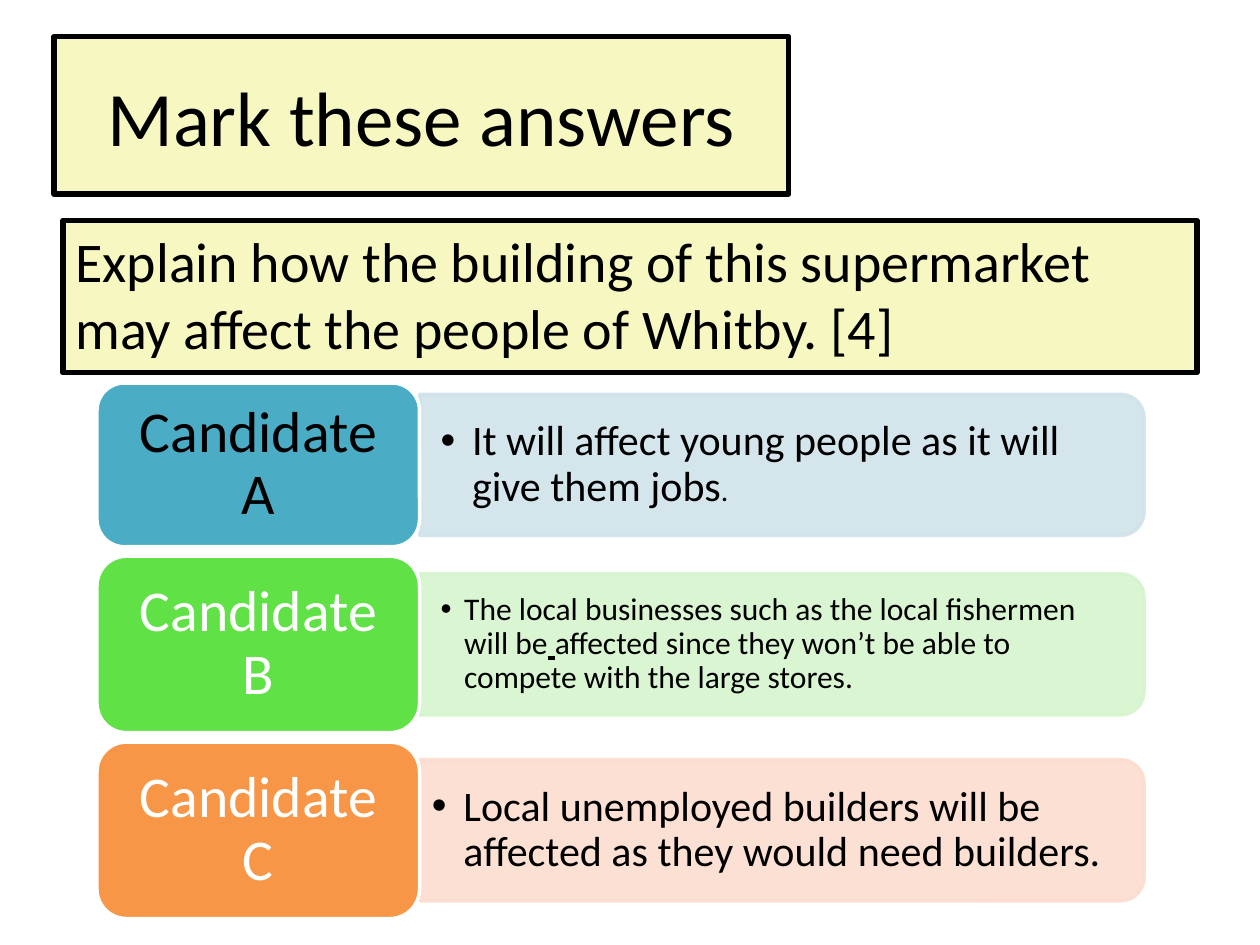
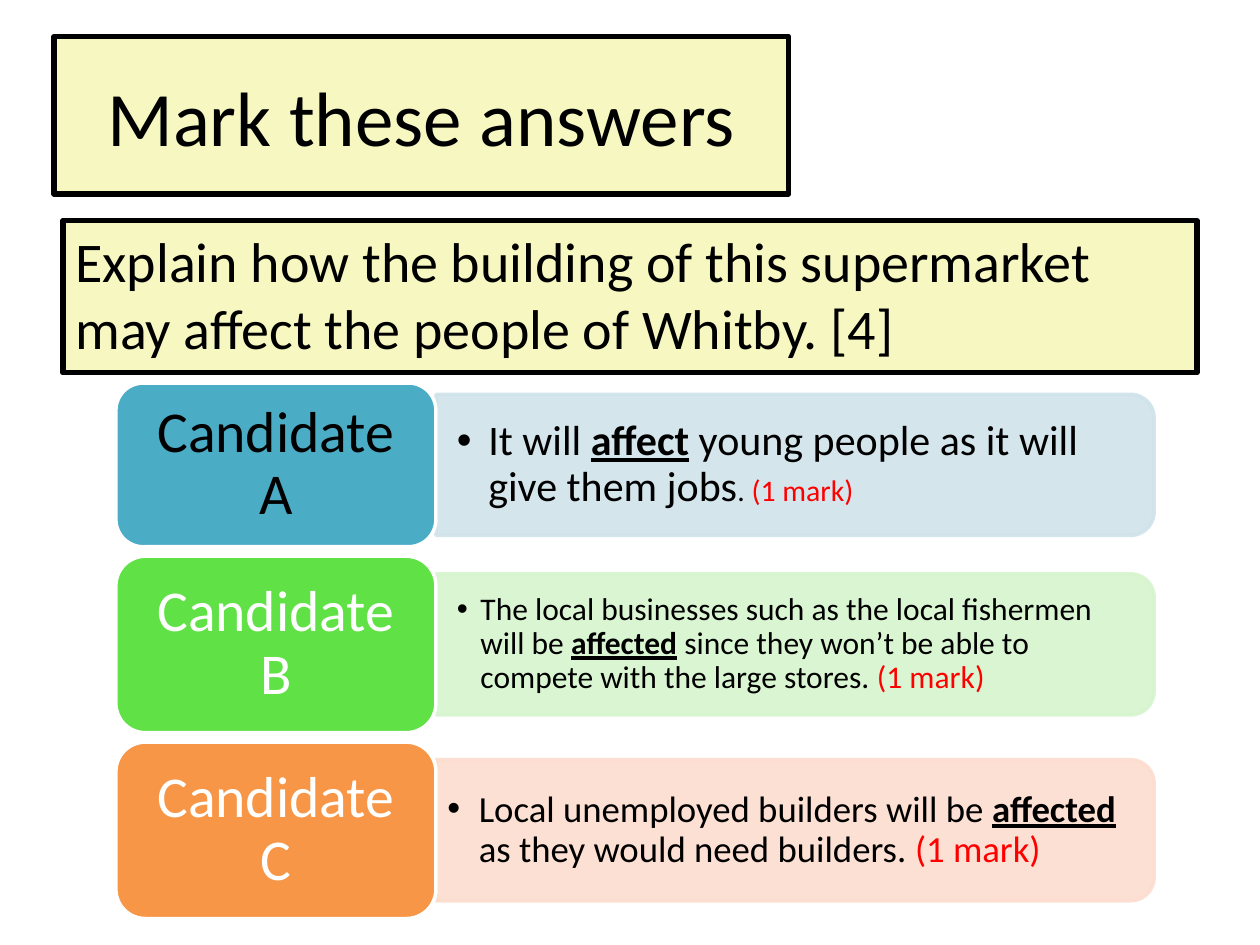
from lxml import etree
from pptx import Presentation
from pptx import util as u
from pptx.dml.color import RGBColor
from pptx.enum import shapes, text
from pptx.oxml.ns import qn


class Theme:
    font = "Calibri"
    ink, white, red, cream = "000000", "FFFFFF", "FF0000", "F2F496"
    title, ask, tag, small = 44, 32, 33, 17
    tags = ["4BACC6", "60E146", "F79646"]
    bands = ["D0E3EA", "D6F4CE", "FCDDCF"]
    names = [ink, white, white]


deck = Presentation()
deck.slide_width, deck.slide_height = u.Inches(10), u.Inches(7.5)
kinds = shapes.MSO_SHAPE


def box(slide, kind, x, y, w, h, fill, line, thick, alpha=100, turn=False):
    """Draw a shape placed in percent of the slide; turn lays it on its side."""
    x, w = (int(v * deck.slide_width / 100) for v in (x, w))
    y, h = (int(v * deck.slide_height / 100) for v in (y, h))
    if turn:
        x, y, w, h = x + (w - h) // 2, y + (h - w) // 2, h, w
    shape = slide.shapes.add_shape(kind, x, y, w, h)
    shape.rotation = 90 if turn else 0
    shape.shadow.inherit = False
    shape.fill.solid()
    shape.fill.fore_color.rgb = RGBColor.from_string(fill)
    shape.line.color.rgb = RGBColor.from_string(line)
    shape.line.width = u.Pt(thick)
    if alpha < 100:
        for tint in shape._element.spPr.iter(qn("a:srgbClr")):
            if tint.get("val") == fill:
                etree.SubElement(tint, qn("a:alpha"), val=str(alpha * 1000))
    return shape


def write(shape, runs, size, color=Theme.ink, align="LEFT", anchor="MIDDLE",
          pad=7.2, space=None, hang=0):
    """Fill a shape with runs of (text, changes); hang adds a bullet."""
    frame = shape.text_frame
    frame.word_wrap = True
    frame.vertical_anchor = getattr(text.MSO_ANCHOR, anchor)
    frame.margin_left = frame.margin_right = u.Pt(pad)
    frame.margin_top = frame.margin_bottom = u.Pt(pad / 2)
    para = frame.paragraphs[0]
    para.alignment = getattr(text.PP_ALIGN, align)
    para.line_spacing = space
    for words, look in runs:
        run = para.add_run()
        run.text = words
        font = run.font
        font.name = Theme.font
        font.size = u.Pt(look.get("size", size))
        font.color.rgb = RGBColor.from_string(look.get("color", color))
        font.bold = font.underline = look.get("strong", False)
    if hang:
        props = para._p.get_or_add_pPr()
        props.set("marL", str(u.Pt(hang)))
        props.set("indent", str(-u.Pt(hang)))
        etree.SubElement(props, qn("a:buFont"), typeface="Arial")
        etree.SubElement(props, qn("a:buChar"), char="•")


# Answers: (type size, padding, bullet indent, runs)
plain, strong = {}, {"strong": True}
small, red = {"size": Theme.small}, {"color": Theme.red}
mark = ("(1 mark)", red)
first = [
    (24, 12, 18, [("It will affect young people as it will give them jobs", plain),
                  (".", small)]),
    (18, 12, 13.5, [("The local businesses such as the local fishermen will be", plain),
                    (" ", strong),
                    ("affected since they won’t be able to compete with the large stores.",
                     plain)]),
    (24, 7.2, 18, [("Local unemployed builders will be affected as they would "
                    "need builders.", plain)]),
]
second = [
    (24, 12, 18, [("It will ", plain), ("affect", strong),
                  (" young people as it will give them jobs", plain),
                  (". ", small), ("(1 mark)", small | red)]),
    (18, 12, 13.5, [("The local businesses such as the local fishermen will be ", plain),
                    ("affected", strong),
                    (" since they won’t be able to compete with the large stores. ", plain),
                    mark]),
    (21, 6.5, 18, [("Local unemployed builders will be ", plain), ("affected", strong),
                   (" as they would need builders. ", plain), mark]),
]

# Grid in percent of the slide: tags are stacked, bands centred on them
top, gap, band, inner = 40.53, 1, 14.93, 13.47
rows = [17.33, 18.67, 18.67]

for left, tag, wide, answers in [(7.7, 25.6, 57.5, first), (9.2, 25.4, 57, second)]:
    slide = deck.slides.add_slide(deck.slide_layouts[6])

    # Title and question
    head = box(slide, kinds.RECTANGLE, 4.3, 3.87, 58.3, 16.67,
               Theme.cream, Theme.ink, 3, 59)
    write(head, [("Mark these answers", plain)], Theme.title, align="CENTER")
    ask = box(slide, kinds.RECTANGLE, 5, 23.33, 90, 16.13,
              Theme.cream, Theme.ink, 3, 59)
    write(ask, [("Explain how the building of this supermarket may affect the "
                 "people of Whitby. [4]", plain)], Theme.ask, anchor="TOP")

    # Candidates
    y, edge = top, left + tag
    for i, (size, pad, hang, runs) in enumerate(answers):
        mid = y + rows[i] / 2
        tint = Theme.bands[i]
        box(slide, kinds.ROUND_2_SAME_RECTANGLE, edge, mid - band / 2, wide, band,
            tint, tint, 2, 90, turn=True)
        note = slide.shapes.add_textbox(
            int(deck.slide_width * edge / 100),
            int(deck.slide_height * (mid - inner / 2) / 100),
            int(deck.slide_width * (wide - 0.6) / 100),
            int(deck.slide_height * inner / 100))
        write(note, runs, size, pad=pad, space=0.9, hang=hang)
        name = box(slide, kinds.ROUNDED_RECTANGLE, left, y, tag, rows[i],
                   Theme.tags[i], Theme.white, 2)
        write(name, [("Candidate " + "ABC"[i], plain)], Theme.tag, Theme.names[i],
              align="CENTER", pad=10, space=0.9)
        y += rows[i] + gap

deck.save("out.pptx")
